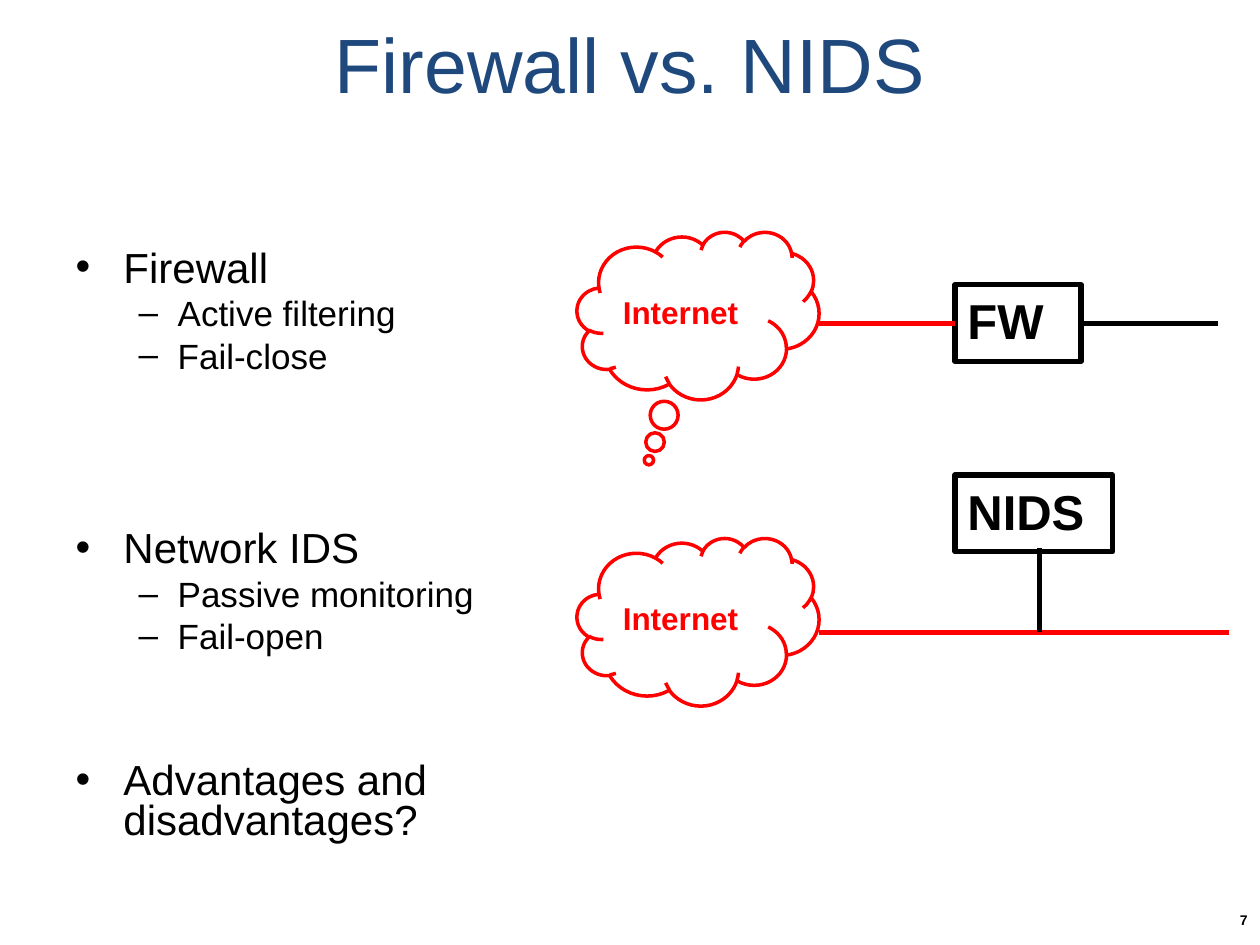
from dataclasses import dataclass

from lxml.etree import SubElement
from pptx import Presentation
from pptx.dml.color import RGBColor
from pptx.enum.shapes import MSO_CONNECTOR as Conn, MSO_SHAPE as Shape
from pptx.enum.text import MSO_ANCHOR as Anchor, MSO_AUTO_SIZE as AutoSize, PP_ALIGN as Align
from pptx.oxml.ns import qn
from pptx.util import Inches, Pt


@dataclass(frozen=True)
class Theme:
    font: str = "Arial"
    title: RGBColor = RGBColor(0x1F, 0x49, 0x7D)
    ink: RGBColor = RGBColor(0, 0, 0)
    outside: RGBColor = RGBColor(0xFF, 0, 0)
    title_size: int = 44
    body_sizes: tuple = (24, 20)
    device_size: int = 28
    cloud_size: int = 18
    number_size: int = 8
    cloud_line: int = 2
    wire_line: int = 3


T = Theme()
TIGHT, GROUP_GAP, LAST_GAP = 5, 89, 61
INDENTS = ((0.38, -0.38), (0.81, -0.31))
TOPICS = (
    (0, "Firewall", TIGHT),
    (1, "Active filtering", TIGHT),
    (1, "Fail-close", TIGHT),
    (0, "Network IDS", GROUP_GAP),
    (1, "Passive monitoring", TIGHT),
    (1, "Fail-open", TIGHT),
    (0, "Advantages and disadvantages?", LAST_GAP),
)


def assign(target, values):
    for name, value in values.items():
        setattr(target, name, value)


def place(sp, box):
    assign(sp, dict(zip(("left", "top", "width", "height"), map(Inches, box))))


def write(p, text, size, color, bold=False, align=Align.LEFT):
    p.alignment = align
    r = p.add_run()
    r.text = text
    assign(r.font, {"name": T.font, "size": Pt(size), "bold": bold})
    r.font.color.rgb = color


def add_title(s, box, text):
    sp = s.shapes.title
    place(sp, box)
    assign(sp.text_frame, {"vertical_anchor": Anchor.MIDDLE, "auto_size": AutoSize.NONE})
    write(sp.text_frame.paragraphs[0], text, T.title_size, T.title, align=Align.CENTER)


def add_topics(s, box, topics):
    sp = s.placeholders[1]
    place(sp, box)
    tf = sp.text_frame
    tf.auto_size = AutoSize.NONE
    for i, (level, text, gap) in enumerate(topics):
        p = tf.add_paragraph() if i else tf.paragraphs[0]
        assign(p, {"level": level, "line_spacing": 0.8, "space_before": Pt(gap)})
        pPr = p._p.get_or_add_pPr()
        for name, length in zip(("marL", "indent"), INDENTS[level]):
            pPr.set(name, str(Inches(length)))
        write(p, text, T.body_sizes[level], T.ink)


def add_outline(s, kind, box, text, size, color, weight, anchor):
    sp = s.shapes.add_shape(kind, *map(Inches, box))
    sp.shadow.inherit = False
    sp.fill.background()
    sp.line.color.rgb = color
    sp.line.width = Pt(weight)
    tf = sp.text_frame
    assign(tf, {"word_wrap": True, "vertical_anchor": anchor, "auto_size": AutoSize.NONE})
    write(tf.paragraphs[0], text, size, color, bold=True)
    return sp


def add_cloud(s, kind, box):
    return add_outline(s, kind, box, "Internet", T.cloud_size, T.outside,
                       T.cloud_line, Anchor.MIDDLE)


def add_device(s, box, text):
    return add_outline(s, Shape.RECTANGLE, box, text, T.device_size, T.ink,
                       T.wire_line, Anchor.TOP)


def add_wire(s, start, end, color):
    line = s.shapes.add_connector(Conn.STRAIGHT, *map(Inches, (*start, *end)))
    line.line.color.rgb = color
    line.line.width = Pt(T.wire_line)
    SubElement(line._element.spPr, qn("a:effectLst"))
    return line


def add_firewall_diagram(s, box):
    x, y, w, h = box
    cloud = add_cloud(s, Shape.CLOUD_CALLOUT, (x, y, 1.92, h))
    for i, value in enumerate((-0.203, 0.863)):
        cloud.adjustments[i] = value
    left, top, width, height = x + 3, y + 0.42, 1, 0.61
    fw = add_device(s, (left, top, width, height), "FW")
    mid = top + height / 2
    outer = add_wire(s, (x + 1.92, mid), (left, mid), T.outside)
    outer.end_connect(fw, 1)
    inner = add_wire(s, (left + width, mid), (x + w, mid), T.ink)
    inner.begin_connect(fw, 3)


def add_nids_diagram(s, box):
    x, y, w, h = box
    cloud_top, wire_y, tap_x = y + 0.5, y + 1.25, x + 3.67
    add_cloud(s, Shape.CLOUD, (x, cloud_top, 1.92, h - 0.5))
    add_wire(s, (x + 1.92, wire_y), (x + w, wire_y), T.outside)
    add_device(s, (x + 3, y, 1.25, 0.61), "NIDS")
    add_wire(s, (tap_x, wire_y), (tap_x, y + 0.58), T.ink)


def add_page_number(s, box, text):
    tf = s.shapes.add_textbox(*map(Inches, box)).text_frame
    assign(tf, {"word_wrap": True, "vertical_anchor": Anchor.MIDDLE})
    write(tf.paragraphs[0], text, T.number_size, T.ink, bold=True, align=Align.RIGHT)


def main():
    prs = Presentation()
    assign(prs, {"slide_width": Inches(10), "slide_height": Inches(7.5)})
    s = prs.slides.add_slide(prs.slide_layouts[1])
    add_title(s, (0.5, 0, 9, 1), "Firewall vs. NIDS")
    add_topics(s, (0.5, 1.94, 3.55, 5.06), TOPICS)
    add_page_number(s, (9.31, 7.1, 0.69, 0.4), "7")
    add_firewall_diagram(s, (4.58, 1.84, 5.09, 1.33))
    add_nids_diagram(s, (4.58, 3.77, 5.17, 1.83))
    prs.save("out.pptx")


if __name__ == "__main__":
    main()
